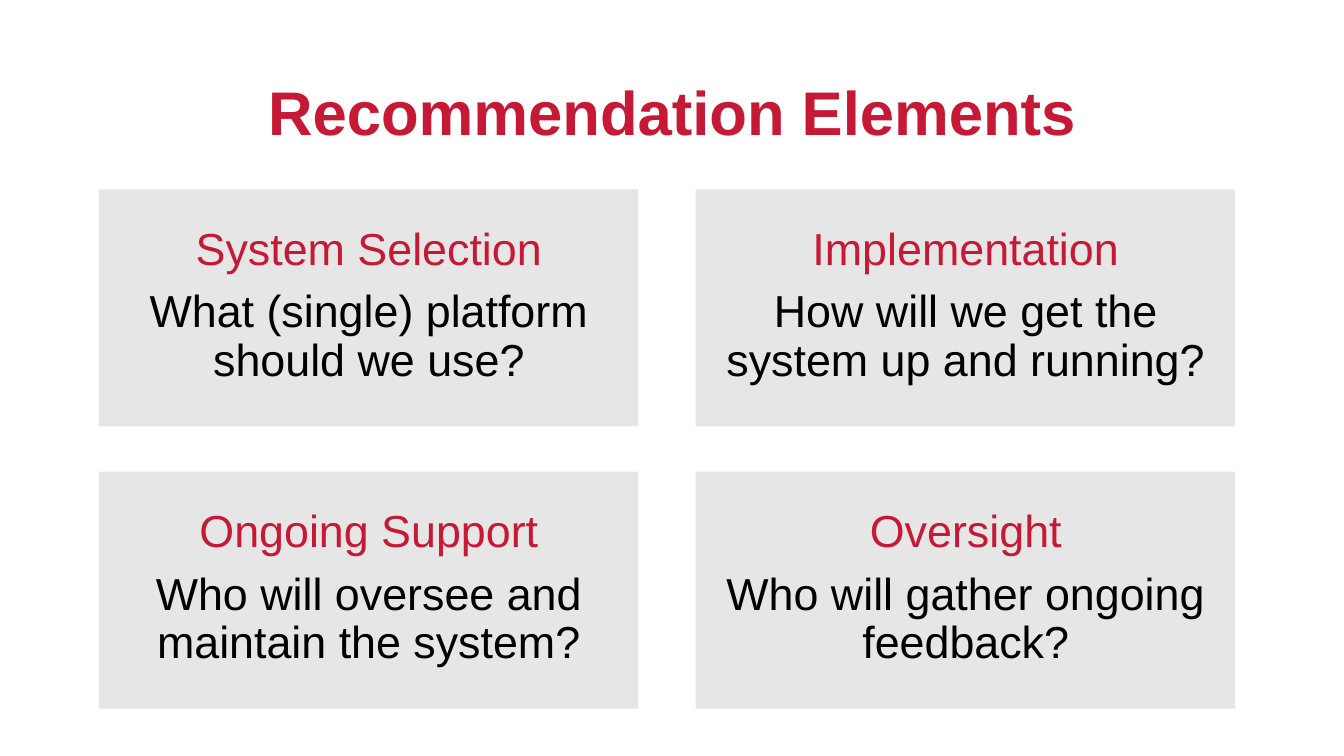
from lxml import etree
from pptx import Presentation
from pptx.dml.color import RGBColor
from pptx.enum import shapes, text
from pptx.oxml.ns import qn
from pptx.util import Inches, Pt

COLORS = {"red": "C61935", "black": "000000", "panel": "E7E6E6"}
CARDS = [
    ("System Selection", "What (single) platform should we use?"),
    ("Implementation", "How will we get the system up and running?"),
    ("Ongoing Support", "Who will oversee and maintain the system?"),
    ("Oversight", "Who will gather ongoing feedback?"),
]
LEFT, TOP = 0.98, 1.88
COLUMN_STEP, ROW_STEP = 5.92, 2.8
PANEL_WIDTH, PANEL_HEIGHT = 5.35, 2.35
TEXT_WIDTH, TEXT_HEIGHT = 5.04, 1.92
TEXT_INSET_X, TEXT_INSET_Y = 0.16, 0.2


class SlideBuilder:
    def __init__(self, slide, font="Arial"):
        self.slide = slide
        self.font = font

    def color(self, name):
        return RGBColor.from_string(COLORS[name])

    def place(self, shape, left, top, width, height):
        shape.left, shape.top = Inches(left), Inches(top)
        shape.width, shape.height = Inches(width), Inches(height)

    def add_lines(self, shape, lines, size, bold=False, space_before=0):
        """Fill a shape with centred paragraphs given as (wording, color name)."""
        frame = shape.text_frame
        frame.word_wrap = True
        frame.auto_size = text.MSO_AUTO_SIZE.NONE
        frame.vertical_anchor = text.MSO_ANCHOR.MIDDLE
        for index, (wording, color) in enumerate(lines):
            paragraph = frame.add_paragraph() if index else frame.paragraphs[0]
            paragraph.alignment = text.PP_ALIGN.CENTER
            paragraph.line_spacing = 0.9
            paragraph.space_before = Pt(space_before)
            run = paragraph.add_run()
            run.text = wording
            run.font.name = self.font
            run.font.size = Pt(size)
            run.font.bold = bold
            run.font.color.rgb = self.color(color)

    def title(self, wording):
        shape = self.slide.shapes.title
        self.place(shape, 0.77, 0.63, 11.8, 1.03)
        self.add_lines(shape, [(wording, "red")], 44, bold=True)

    def panel(self, left, top):
        shape = self.slide.shapes.add_shape(
            shapes.MSO_SHAPE.RECTANGLE, Inches(left), Inches(top),
            Inches(PANEL_WIDTH), Inches(PANEL_HEIGHT))
        shape.shadow.inherit = False
        shape.fill.solid()
        shape.fill.fore_color.rgb = self.color("panel")
        shape.line.fill.background()

    def remove_bullets(self, shape):
        for paragraph in shape.text_frame.paragraphs:
            properties = paragraph._p.get_or_add_pPr()
            properties.set("marL", "0")
            properties.set("indent", "0")
            etree.SubElement(properties, qn("a:buNone"))

    def card(self, left, top, heading, question, placeholder=None):
        self.panel(left, top)
        box = (left + TEXT_INSET_X, top + TEXT_INSET_Y, TEXT_WIDTH, TEXT_HEIGHT)
        if placeholder is None:
            shape = self.slide.shapes.add_textbox(*map(Inches, box))
        else:
            shape = placeholder
            self.place(shape, *box)
            # Bring the text in front of its panel
            shape.element.getparent().append(shape.element)
        self.add_lines(shape, [(heading, "red"), (question, "black")], 32, space_before=10)
        if placeholder is not None:
            self.remove_bullets(shape)


def main():
    presentation = Presentation()
    presentation.slide_width = Inches(13.33)
    presentation.slide_height = Inches(7.5)
    slide = presentation.slides.add_slide(presentation.slide_layouts[1])
    builder = SlideBuilder(slide)
    body = slide.placeholders[1]

    builder.title("Recommendation Elements")
    for index, (heading, question) in enumerate(CARDS):
        row, column = divmod(index, 2)
        builder.card(LEFT + column * COLUMN_STEP, TOP + row * ROW_STEP,
                     heading, question, placeholder=None if index else body)
    presentation.save("out.pptx")


if __name__ == "__main__":
    main()
